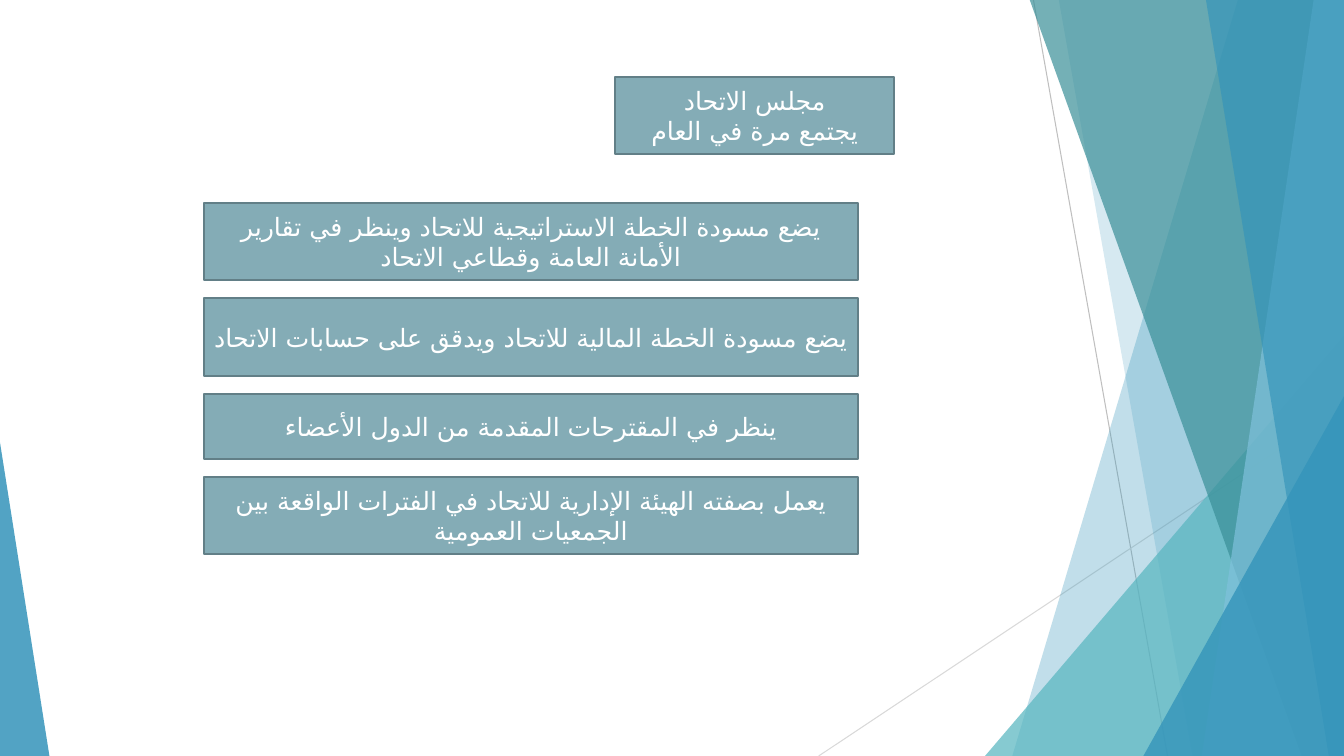
from lxml import etree
from pptx import Presentation
from pptx.dml.color import RGBColor
from pptx.enum.shapes import MSO_CONNECTOR, MSO_SHAPE
from pptx.enum.text import MSO_ANCHOR, MSO_AUTO_SIZE, PP_ALIGN
from pptx.oxml.ns import qn
from pptx.util import Inches, Pt

STRAIGHT = MSO_CONNECTOR.STRAIGHT
RECTANGLE = MSO_SHAPE.RECTANGLE
TRIANGLE = MSO_SHAPE.ISOSCELES_TRIANGLE
CENTER = PP_ALIGN.CENTER
MIDDLE = MSO_ANCHOR.MIDDLE
NO_AUTOFIT = MSO_AUTO_SIZE.NONE

WIDTH, HEIGHT = 13.33, 7.5
BLUE = "3494BA"
TITLE_ONLY = 5

COUNCIL = ["مجلس الاتحاد", "يجتمع مرة في العام"]
DUTIES = [
    (2.01, 0.77, "يضع مسودة الخطة الاستراتيجية للاتحاد وينظر في تقارير الأمانة العامة وقطاعي الاتحاد"),
    (2.96, 0.77, "يضع مسودة الخطة المالية للاتحاد ويدقق على حسابات الاتحاد"),
    (3.91, 0.64, "ينظر في المقترحات المقدمة من الدول الأعضاء"),
    (4.73, 0.77, "يعمل بصفته الهيئة الإدارية للاتحاد في الفترات الواقعة بين الجمعيات العمومية"),
]


def rgb(value):
    return RGBColor.from_string(value)


def write(tf, paragraphs, size=18, color="FFFFFF", font="Lato", arabic_font="DejaVu Sans"):
    """Fill a text frame with centred right-to-left paragraphs."""
    tf.word_wrap = True
    tf.auto_size = NO_AUTOFIT
    tf.vertical_anchor = MIDDLE
    for i, text in enumerate(paragraphs):
        p = tf.paragraphs[0] if i == 0 else tf.add_paragraph()
        p.alignment = CENTER
        p._p.get_or_add_pPr().set("rtl", "1")
        r = p.add_run()
        r.text = text
        r.font.size = Pt(size)
        r.font.name = font
        r.font.color.rgb = rgb(color)
        etree.SubElement(r._r.get_or_add_rPr(), qn("a:cs"), typeface=arabic_font)


class Deck:
    """Holds the box style and the current slide."""

    box_fill = "84ACB6"
    box_line = "627F87"
    box_line_width = 1.5

    def __init__(self, slide):
        self.s = slide

    def line(self, x1, y1, x2, y2, color):
        sp = self.s.shapes.add_connector(
            STRAIGHT, Inches(x1), Inches(y1), Inches(x2), Inches(y2))
        sp.line.color.rgb = rgb(color)
        sp.line.width = Pt(0.75)
        etree.SubElement(sp._element.spPr, qn("a:effectLst"))

    def glaze(self, sp, color, opacity):
        """Give a shape a see-through fill without outline."""
        sp.shadow.inherit = False
        sp.fill.solid()
        sp.fill.fore_color.rgb = rgb(color)
        sp.line.fill.background()
        clr = sp._element.spPr.find(".//" + qn("a:srgbClr"))
        etree.SubElement(clr, qn("a:alpha"), val=str(opacity * 1000))

    def facet(self, top_x, bottom_x, color, opacity):
        """Draw a full-height band from a slanted edge to the right side."""
        top = -0.01
        corners = [(WIDTH, top), (WIDTH, HEIGHT), (bottom_x, HEIGHT)]
        builder = self.s.shapes.build_freeform(Inches(top_x), Inches(top))
        builder.add_line_segments([(Inches(x), Inches(y)) for x, y in corners])
        self.glaze(builder.convert_to_shape(), color, opacity)

    def triangle(self, left, top, width, apex, color, opacity):
        """Draw a triangle that stands on the bottom of the slide."""
        sp = self.s.shapes.add_shape(
            TRIANGLE, Inches(left), Inches(top), Inches(width), Inches(HEIGHT - top))
        sp.adjustments[0] = apex
        self.glaze(sp, color, opacity)

    def style_box(self, sp, paragraphs):
        sp.fill.solid()
        sp.fill.fore_color.rgb = rgb(self.box_fill)
        sp.line.color.rgb = rgb(self.box_line)
        sp.line.width = Pt(self.box_line_width)
        write(sp.text_frame, paragraphs)

    def title(self, left, top, width, height, paragraphs):
        sp = self.s.shapes.title
        sp.left, sp.top = Inches(left), Inches(top)
        sp.width, sp.height = Inches(width), Inches(height)
        self.style_box(sp, paragraphs)

    def box(self, left, top, width, height, text):
        sp = self.s.shapes.add_shape(
            RECTANGLE, Inches(left), Inches(top), Inches(width), Inches(height))
        sp.shadow.inherit = False
        self.style_box(sp, [text])


def main():
    prs = Presentation()
    prs.slide_width, prs.slide_height = Inches(WIDTH), Inches(HEIGHT)
    deck = Deck(prs.slides.add_slide(prs.slide_layouts[TITLE_ONLY]))

    deck.line(10.25, 0, 11.58, HEIGHT, "BFBFBF")
    deck.line(WIDTH, 4.03, 8.12, HEIGHT, "D9D9D9")
    deck.facet(12.28, 10.04, BLUE, 30)
    deck.facet(10.5, 11.83, BLUE, 20)
    deck.triangle(9.77, 3.33, 3.56, 1, "58B6C0", 72)
    deck.facet(10.21, 12.91, "3A8F98", 70)
    deck.facet(13.03, 11.92, "7FC1DB", 70)
    deck.facet(11.96, 13.18, BLUE, 65)
    deck.triangle(11.34, 3.93, 1.99, 1, BLUE, 80)
    deck.triangle(0, 4.39, 0.49, 0, BLUE, 85)

    deck.title(6.1, 0.76, 2.77, 0.77, COUNCIL)
    for top, height, text in DUTIES:
        deck.box(2.02, top, 6.49, height, text)

    prs.save("out.pptx")


if __name__ == "__main__":
    main()
